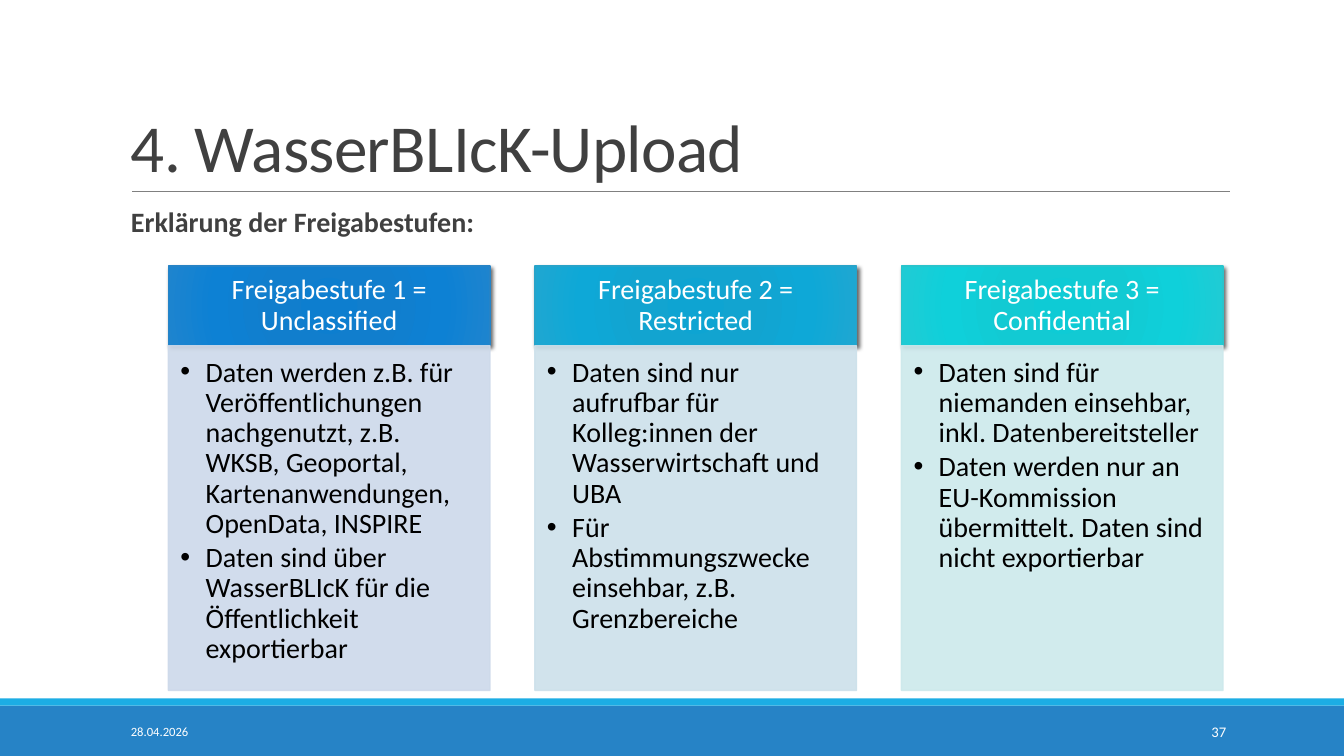
from lxml.etree import SubElement
from pptx import Presentation
from pptx.dml.color import RGBColor
from pptx.enum.shapes import MSO_CONNECTOR as Connector, MSO_SHAPE as Shape
from pptx.enum.text import MSO_ANCHOR as Anchor, PP_ALIGN as Align
from pptx.oxml import parse_xml
from pptx.oxml.ns import nsdecls, qn
from pptx.util import Inches, Pt

WIDTH, HEIGHT = 13.33, 7.5
LEFT, CONTENT_WIDTH = 1.2, 11
CARD_LEFT, CARD_TOP, CARD_WIDTH, CARD_PITCH = 1.67, 2.64, 3.19, 3.635
HEADER_HEIGHT, BODY_HEIGHT = 0.79, 3.42
STOPS = (0, 34, 70, 100)
LEVELS = [
    ("Freigabestufe 1 = Unclassified",
     ["Daten werden z.B. für Veröffentlichungen nachgenutzt, z.B. WKSB, Geoportal, "
      "Kartenanwendungen, OpenData, INSPIRE",
      "Daten sind über WasserBLIcK für die Öffentlichkeit exportierbar"],
     ("0D7ECF", "117ECD", "0D81D4", "1E84CE"), "2683C6", "CDD9EA"),
    ("Freigabestufe 2 = Restricted",
     ["Daten sind nur aufrufbar für Kolleg:innen der Wasserwirtschaft und UBA",
      "Für Abstimmungszwecke einsehbar, z.B. Grenzbereiche"],
     ("0EA4D2", "12A4D0", "0EA8D7", "1FA7D1"), "27A3C9", "CDE1EB"),
    ("Freigabestufe 3 = Confidential",
     ["Daten sind für niemanden einsehbar, inkl. Datenbereitsteller",
      "Daten werden nur an EU-Kommission übermittelt. Daten sind nicht exportierbar"],
     ("0ECBD5", "12CAD3", "0FD0DA", "20CBD4"), "28C4CC", "CDE9EC"),
]


def color(hex_value):
    """Turn a hex string into a colour."""
    return RGBColor.from_string(hex_value)


def write(shape, lines, size, ink, bold=False, align=Align.LEFT, anchor=Anchor.TOP,
          insets=(0.1, 0.05, 0.1, 0.05), spacing=1.0, after=0, bullet=False, tracking=0):
    """Fill a shape with formatted paragraphs."""
    frame = shape.text_frame
    frame.word_wrap = True
    frame.vertical_anchor = anchor
    (frame.margin_left, frame.margin_top,
     frame.margin_right, frame.margin_bottom) = map(Inches, insets)
    for index, line in enumerate(lines):
        paragraph = frame.paragraphs[0] if index == 0 else frame.add_paragraph()
        if bullet:
            properties = paragraph._p.get_or_add_pPr()
            properties.set("marL", str(Inches(0.25)))
            properties.set("indent", str(-Inches(0.25)))
            SubElement(properties, qn("a:buFont"), typeface="Arial")
            SubElement(properties, qn("a:buChar"), char="•")
        paragraph.alignment = align
        paragraph.line_spacing = spacing
        paragraph.space_after = Pt(after)
        run = paragraph.add_run()
        run.text = line
        run.font.name = "Calibri"
        run.font.size = Pt(size)
        run.font.bold = bold
        run.font.color.rgb = color(ink)
        if tracking:
            run._r.get_or_add_rPr().set("spc", str(int(tracking * 100)))


def add_text(slide, box, lines, size, ink, **style):
    """Add a text box with formatted paragraphs."""
    write(slide.shapes.add_textbox(*map(Inches, box)), lines, size, ink, **style)


def add_rectangle(slide, box, fill, outline=None):
    """Add a flat rectangle."""
    shape = slide.shapes.add_shape(Shape.RECTANGLE, *map(Inches, box))
    shape.shadow.inherit = False
    shape.fill.solid()
    shape.fill.fore_color.rgb = color(fill)
    if outline:
        shape.line.color.rgb = color(outline)
        shape.line.width = Pt(1)
    else:
        shape.line.fill.background()
    return shape


def add_radial_fill(shape, colors):
    """Replace the solid fill by a radial gradient."""
    stops = "".join(f'<a:gs pos="{stop * 1000}"><a:srgbClr val="{value}"/></a:gs>'
                    for stop, value in zip(STOPS, colors))
    gradient = parse_xml(
        f'<a:gradFill {nsdecls("a")} rotWithShape="1"><a:gsLst>{stops}</a:gsLst>'
        '<a:path path="circle"><a:fillToRect l="100000" t="100000" r="100000" b="100000"/>'
        '</a:path></a:gradFill>')
    properties = shape._element.spPr
    properties.replace(properties.find(qn("a:solidFill")), gradient)


def add_shadow(shape):
    """Add a soft shadow to the lower right."""
    shape._element.spPr.find(qn("a:effectLst")).append(parse_xml(
        f'<a:outerShdw {nsdecls("a")} blurRad="{Pt(3)}" dist="{Pt(2)}" dir="2700000" '
        'rotWithShape="0"><a:srgbClr val="000000"><a:alpha val="60000"/></a:srgbClr>'
        '</a:outerShdw>'))


def add_heading(slide, left, width):
    """Place title, rule and subtitle."""
    rule = slide.shapes.add_connector(
        Connector.STRAIGHT, *map(Inches, (left + 0.11, 1.9, left + width, 1.9)))
    rule.line.color.rgb = color("808080")
    rule.line.width = Pt(0.5)
    SubElement(rule._element.spPr, qn("a:effectLst"))
    add_text(slide, (left, 0.31, width, 1.59), ["4. WasserBLIcK-Upload"], 48, "404040",
             anchor=Anchor.BOTTOM, spacing=0.85, tracking=-0.5)
    add_text(slide, (left, 2.02, width, 0.5), ["Erklärung der Freigabestufen:"], 20, "404040",
             bold=True, spacing=0.9, after=2)


def add_footer(slide, height):
    """Place the footer bars, date and page number."""
    top = HEIGHT - height
    add_rectangle(slide, (0, top, WIDTH, height), "2683C6")
    add_rectangle(slide, (0, top - 0.07, WIDTH, 0.07), "1CADE4")
    add_text(slide, (LEFT, top + 0.06, 2.7, 0.4), ["28.04.2026"], 9, "FFFFFF",
             anchor=Anchor.MIDDLE)
    add_text(slide, (10.83, top + 0.06, 1.43, 0.4), ["37"], 10.5, "FFFFFF",
             align=Align.RIGHT, anchor=Anchor.MIDDLE)


def add_level(slide, left, top, level):
    """Place one release level: header above a bulleted card."""
    title, points, gradient, outline, tint = level
    header = add_rectangle(slide, (left, top, CARD_WIDTH, HEADER_HEIGHT), outline, outline)
    add_radial_fill(header, gradient)
    add_shadow(header)
    write(header, [title], 20, "FFFFFF", align=Align.CENTER, anchor=Anchor.MIDDLE,
          insets=(0.16, 0.09, 0.16, 0.09), spacing=0.9)
    card = add_rectangle(slide, (left, top + HEADER_HEIGHT, CARD_WIDTH, BODY_HEIGHT), tint, tint)
    for paint in card._element.spPr.iter(qn("a:srgbClr")):
        SubElement(paint, qn("a:alpha"), val="90000")
    write(card, points, 20, "000000", insets=(0.12, 0.12, 0.16, 0.17),
          spacing=0.9, after=3, bullet=True)


def main():
    """Build and save the slide."""
    presentation = Presentation()
    presentation.slide_width, presentation.slide_height = Inches(WIDTH), Inches(HEIGHT)
    slide = presentation.slides.add_slide(presentation.slide_layouts[6])
    add_footer(slide, 0.5)
    add_heading(slide, LEFT, CONTENT_WIDTH)
    for column, level in enumerate(LEVELS):
        add_level(slide, CARD_LEFT + column * CARD_PITCH, CARD_TOP, level)
    presentation.save("out.pptx")


if __name__ == "__main__":
    main()
